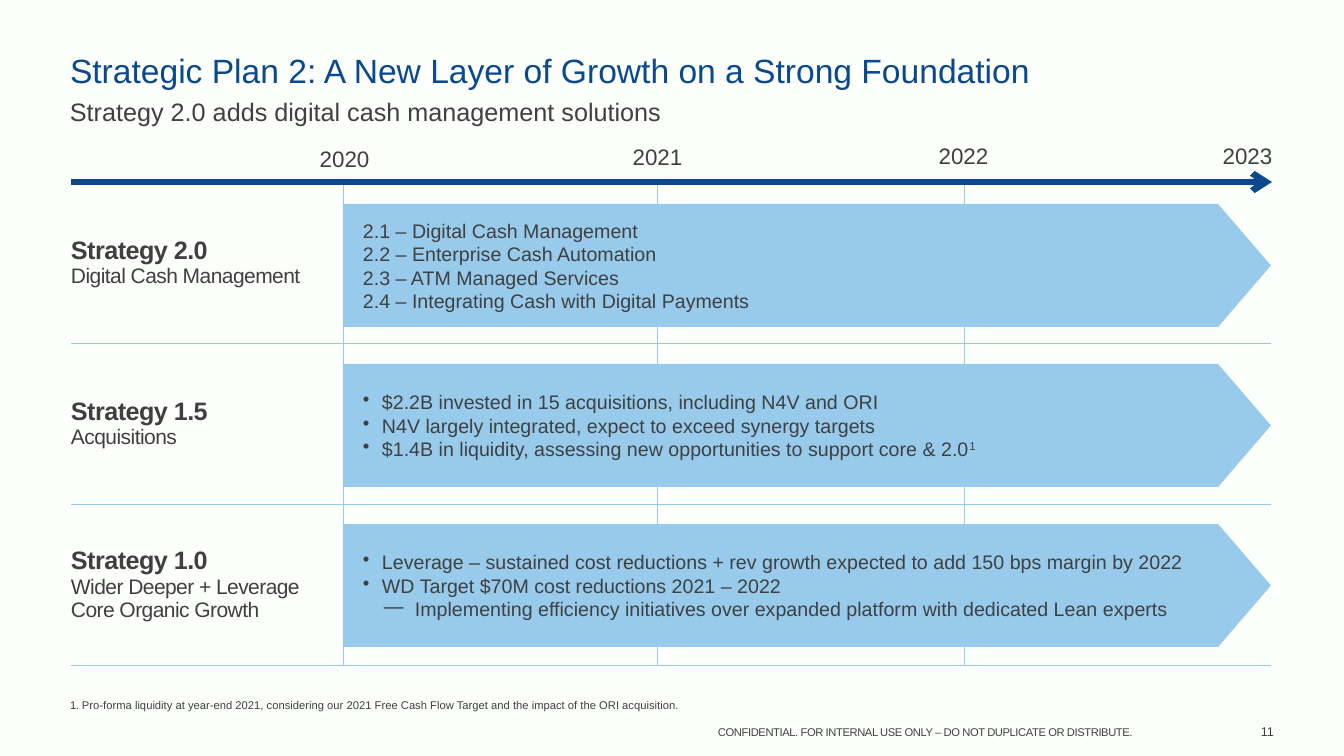
import pptx
import pptx.dml.color
import pptx.enum.shapes
import pptx.enum.text
import pptx.oxml
import pptx.oxml.ns
import pptx.util

ANCHOR = pptx.enum.text.MSO_ANCHOR
ALIGN = pptx.enum.text.PP_ALIGN
GRAY, NAVY, SKY, PAPER = "3F403F", "0A498E", "97CAEB", "FDFFFD"
COLUMNS = [272, 314, 307, 307]
ROW_HEIGHT = 161
YEARS = [("2020", 310, 145), ("2021", 623, 143), ("2022", 929, 142), ("2023", 1213, 142)]
STRATEGIES = [
    (["Strategy 2.0", "Digital Cash Management"],
     [("", "2.1 – Digital Cash Management"),
      ("", "2.2 – Enterprise Cash Automation"),
      ("", "2.3 – ATM Managed Services"),
      ("", "2.4 – Integrating Cash with Digital Payments")]),
    (["Strategy 1.5", "Acquisitions"],
     [("•", "$2.2B invested in 15 acquisitions, including N4V and ORI"),
      ("•", "N4V largely integrated, expect to exceed synergy targets"),
      ("•", "$1.4B in liquidity, assessing new opportunities to support core & 2.0", "1")]),
    (["Strategy 1.0", "Wider Deeper + Leverage", "Core Organic Growth"],
     [("•", "Leverage – sustained cost reductions + rev growth expected to add 150 bps margin by 2022"),
      ("•", "WD Target $70M cost reductions 2021 – 2022"),
      ("—", "Implementing efficiency initiatives over expanded platform with dedicated Lean experts")]),
]
INDENTS = {"•": (19, 19), "—": (52, 31)}


def px(length):
    """Turn px into EMU."""
    return pptx.util.Emu(round(length * 914400 / 100.8))


def color(value):
    """Turn a hex string into a colour."""
    return pptx.dml.color.RGBColor.from_string(value)


def add_xml(parent, tag, content="", **attributes):
    """Append a drawing element to a parent."""
    namespace = pptx.oxml.ns.nsdecls("a")
    listed = " ".join(f'{name}="{value}"' for name, value in attributes.items())
    parent.append(pptx.oxml.parse_xml(f"<a:{tag} {namespace} {listed}>{content}</a:{tag}>"))


def format_run(run, size, ink=GRAY, bold=False, spacing=0):
    """Set the font of one run."""
    run.font.name = "Arial"
    run.font.size = pptx.util.Pt(size)
    run.font.bold = bold
    run.font.color.rgb = color(ink)
    if spacing:
        run.font._element.set("spc", str(spacing))


def set_bullet(paragraph, margin, hanging, tag, **attributes):
    """Give a paragraph a hanging bullet."""
    properties = paragraph._p.get_or_add_pPr()
    properties.set("marL", str(px(margin)))
    properties.set("indent", str(px(-hanging)))
    add_xml(properties, tag, **attributes)


def set_frame(frame, anchor, left, top, right, bottom):
    """Set wrapping, anchor and insets of a text frame."""
    frame.word_wrap = True
    frame.vertical_anchor = anchor
    frame.margin_left, frame.margin_top = px(left), px(top)
    frame.margin_right, frame.margin_bottom = px(right), px(bottom)


def add_text(slide, box, text, size, ink=GRAY, align=ALIGN.LEFT, anchor=ANCHOR.TOP,
             insets=(10, 5, 10, 5), spacing=0):
    """Place one line of text and return its paragraph."""
    frame = slide.shapes.add_textbox(*map(px, box)).text_frame
    set_frame(frame, anchor, *insets)
    paragraph = frame.paragraphs[0]
    paragraph.text = text
    paragraph.alignment = align
    format_run(paragraph.runs[0], size, ink, spacing=spacing)
    return paragraph


def add_heading(slide, left, top, width):
    """Place the title and the subtitle."""
    title = add_text(slide, (left, top, width, 46),
                     "Strategic Plan 2: A New Layer of Growth on a Strong Foundation",
                     24, NAVY, anchor=ANCHOR.BOTTOM)
    title.line_spacing = 0.9
    add_text(slide, (left, top + 41, 960, 40),
             "Strategy 2.0 adds digital cash management solutions", 18)


def add_footer(slide, left, top, width):
    """Place the footnote, the notice and the page number."""
    footnote = add_text(slide, (left, top, width, 16),
                        "Pro-forma liquidity at year-end 2021, considering our 2021 Free Cash Flow "
                        "Target and the impact of the ORI acquisition.",
                        8, anchor=ANCHOR.BOTTOM, insets=(10, 5, 10, 0))
    set_bullet(footnote, 12, 12, "buAutoNum", type="arabicPeriod")
    footnote.line_spacing = 0.85
    add_text(slide, (left + 620, top + 24, 491, 24),
             "CONFIDENTIAL. FOR INTERNAL USE ONLY – DO NOT DUPLICATE OR DISTRIBUTE.",
             8, align=ALIGN.CENTER, spacing=-30)
    add_text(slide, (left + width - 61, top + 23, 61, 25), "11", 9,
             align=ALIGN.RIGHT, anchor=ANCHOR.MIDDLE)


def set_borders(cell, column):
    """Rule a cell on every side except the outer edges of the table."""
    sides = {"lnL": column > 0, "lnR": column < len(COLUMNS) - 1, "lnT": True, "lnB": True}
    for side, ruled in sides.items():
        content = f'<a:solidFill><a:srgbClr val="{SKY}"/></a:solidFill>' if ruled else "<a:noFill/>"
        add_xml(cell._tc.get_or_add_tcPr(), side, content, w=6350)


def add_grid(slide, left, top):
    """Place the table with the strategy names."""
    count = len(STRATEGIES)
    table = slide.shapes.add_table(count, len(COLUMNS), px(left), px(top), px(sum(COLUMNS)),
                                   px(ROW_HEIGHT * count)).table
    table.first_row = table.horz_banding = False
    for column, width in enumerate(COLUMNS):
        table.columns[column].width = px(width)
    for row, (names, _) in enumerate(STRATEGIES):
        table.rows[row].height = px(ROW_HEIGHT)
        for column in range(len(COLUMNS)):
            cell = table.cell(row, column)
            set_borders(cell, column)
            cell.fill.background()
        label = table.cell(row, 0)
        set_frame(label, ANCHOR.MIDDLE, 0, 0, 0, 0)
        label.text_frame.text = "\n".join(names)
        for index, paragraph in enumerate(label.text_frame.paragraphs):
            format_run(paragraph.runs[0], 15 if index else 18, bold=index == 0, spacing=-40)


def add_timeline(slide, left, top, width):
    """Place the time arrow and its years."""
    arrow = slide.shapes.add_connector(pptx.enum.shapes.MSO_CONNECTOR.STRAIGHT,
                                       px(left), px(top), px(left + width), px(top))
    arrow.line.color.rgb = color(NAVY)
    arrow.line.width = pptx.util.Pt(4.5)
    add_xml(arrow.line._get_or_add_ln(), "tailEnd", type="arrow")
    add_xml(arrow._element.spPr, "effectLst")
    for year, year_left, year_top in YEARS:
        add_text(slide, (year_left, year_top, 69, 27), year, 16,
                 align=ALIGN.CENTER, insets=(0, 0, 0, 0))


def add_banner(slide, box, lines):
    """Place one pentagon with its lines of text."""
    shape = slide.shapes.add_shape(pptx.enum.shapes.MSO_SHAPE.PENTAGON, *map(px, box))
    shape.adjustments[0] = 0.43
    shape.shadow.inherit = False
    shape.fill.solid()
    shape.fill.fore_color.rgb = color(SKY)
    shape.line.fill.background()
    frame = shape.text_frame
    set_frame(frame, ANCHOR.MIDDLE, 20, 5, 10, 5)
    frame.text = "\n".join(text for _, text, *_ in lines)
    for paragraph, (bullet, _, *superscript) in zip(frame.paragraphs, lines):
        paragraph.alignment = ALIGN.LEFT
        if bullet:
            paragraph.level = 1 if bullet == "—" else 0
            set_bullet(paragraph, *INDENTS[bullet], "buChar", char=bullet)
        for mark in superscript:
            run = paragraph.add_run()
            run.text = mark
            run.font._element.set("baseline", "30000")
        for run in paragraph.runs:
            format_run(run, 14)


def main():
    """Build the slide and save it."""
    presentation = pptx.Presentation()
    presentation.slide_width, presentation.slide_height = px(1344), px(756)
    slide = presentation.slides.add_slide(presentation.slide_layouts[6])
    slide.background.fill.solid()
    slide.background.fill.fore_color.rgb = color(PAPER)
    left, top = 71, 182
    add_heading(slide, 60, 50, 1224)
    add_grid(slide, left, top)
    add_timeline(slide, left, top, sum(COLUMNS) + 1)
    for row, (_, lines) in enumerate(STRATEGIES):
        add_banner(slide, (left + COLUMNS[0], top + 22 + 160 * row, 928, 123), lines)
    add_footer(slide, 60, 696, 1224)
    presentation.save("out.pptx")


if __name__ == "__main__":
    main()
